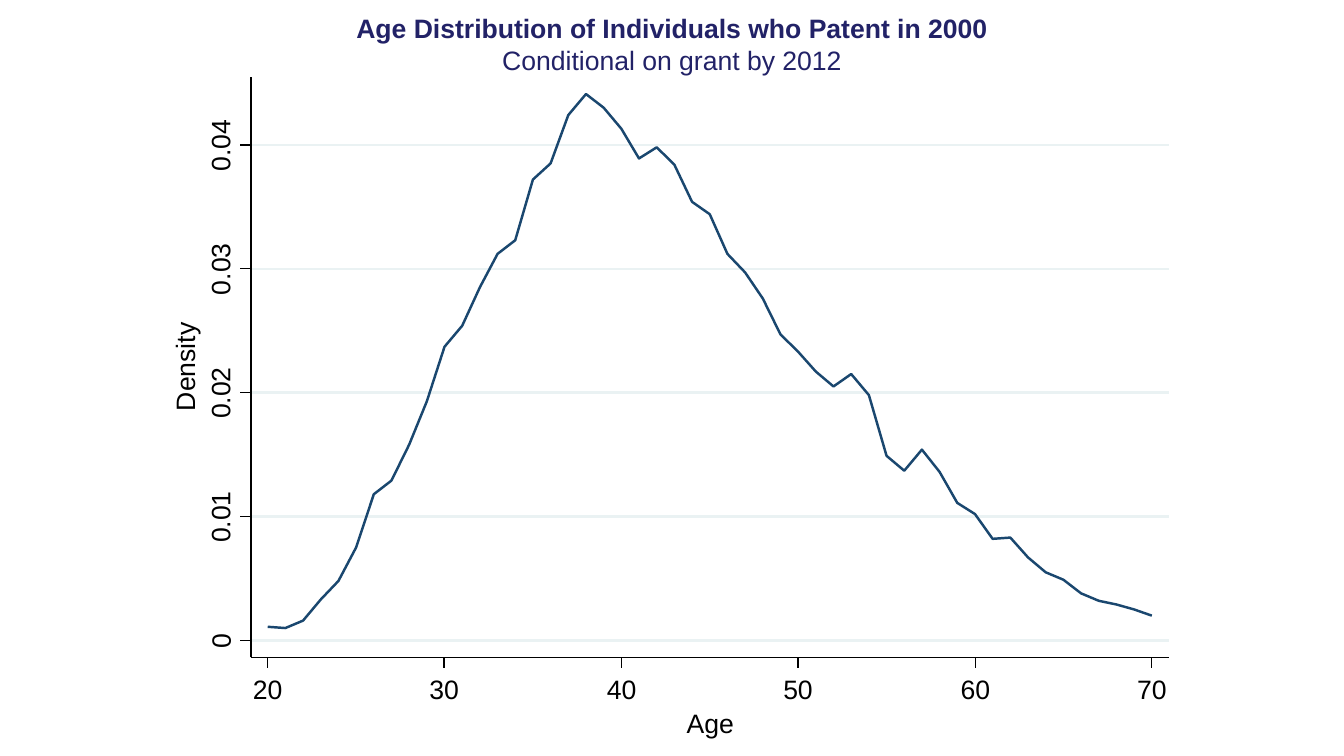
from lxml.etree import SubElement
from pptx import Presentation
from pptx.dml.color import RGBColor
from pptx.enum.shapes import MSO_CONNECTOR, MSO_SHAPE
from pptx.enum.text import MSO_AUTO_SIZE, PP_ALIGN
from pptx.oxml.ns import qn
from pptx.util import Pt

PX = 9525  # EMU in one px, 96 px to the inch
COLORS = {"paper": "FFFFFF", "grid": "EAF2F3", "curve": "1A476F",
          "axis": "000000", "title": "222267"}
LEFT, TOP, RIGHT, BOTTOM = 239, 73, 1113, 626  # plot area
FIRST_X, AGE_SPAN = 255, 842  # age 20, and the width of 50 years
ZERO_Y, DENSITY_SPAN = 610, 472  # density 0, and the height of 0.04
TICK = 10

# Density in thousandths for each age from 20 to 70
DENSITIES = [
    1.1, 1.0, 1.6, 3.3, 4.8, 7.5, 11.8, 12.9, 15.8, 19.3,
    23.7, 25.4, 28.5, 31.2, 32.3, 37.2, 38.5, 42.4, 44.1, 43.0,
    41.3, 38.9, 39.8, 38.4, 35.4, 34.4, 31.2, 29.7, 27.6, 24.7,
    23.3, 21.7, 20.5, 21.5, 19.8, 14.9, 13.7, 15.4, 13.6, 11.1,
    10.2, 8.2, 8.3, 6.7, 5.5, 4.9, 3.8, 3.2, 2.9, 2.5, 2.0]

deck = Presentation()
deck.slide_width, deck.slide_height = 1280 * PX, 720 * PX
page = deck.slides.add_slide(deck.slide_layouts[6])
graph = page.shapes.add_group_shape()


def add_text(shapes, lines, left, top, width, height, color="axis",
             align=PP_ALIGN.LEFT, wrap=False, bold_first=False, rotation=0):
    box = shapes.add_textbox(left * PX, top * PX, width * PX, height * PX)
    box.rotation = rotation
    frame = box.text_frame
    frame.margin_left = frame.margin_right = 0
    frame.margin_top = frame.margin_bottom = 0
    frame.word_wrap = wrap
    frame.auto_size = MSO_AUTO_SIZE.SHAPE_TO_FIT_TEXT
    for index, line in enumerate(lines):
        para = frame.paragraphs[0] if index == 0 else frame.add_paragraph()
        para.alignment = align
        span = para.add_run()
        span.text = line
        span.font.name, span.font.size = "Arial", Pt(19)
        span.font.bold = bold_first and index == 0
        span.font.color.rgb = RGBColor.from_string(COLORS[color])


def add_line(x1, y1, x2, y2, color="axis", weight=0.88):
    line = graph.shapes.add_connector(
        MSO_CONNECTOR.STRAIGHT, x1 * PX, y1 * PX, x2 * PX, y2 * PX)
    line.line.color.rgb = RGBColor.from_string(COLORS[color])
    line.line.width = Pt(weight)
    SubElement(line._element.spPr, qn("a:effectLst"))


# Plot background
plot = graph.shapes.add_shape(MSO_SHAPE.RECTANGLE, LEFT * PX, TOP * PX,
                              (RIGHT - LEFT) * PX, (BOTTOM - TOP) * PX)
plot.shadow.inherit = False
plot.fill.solid()
plot.fill.fore_color.rgb = RGBColor.from_string(COLORS["paper"])
plot.line.color.rgb = RGBColor.from_string(COLORS["paper"])
plot.line.width = Pt(0.88)

# Grid lines
grid_rows = [ZERO_Y - step * DENSITY_SPAN // 4 for step in range(5)]
for y in grid_rows:
    add_line(LEFT, y, RIGHT, y, color="grid", weight=1.75)

# Density curve
points = [((FIRST_X + year * AGE_SPAN / 50) * PX,
           (ZERO_Y - density * DENSITY_SPAN / 40) * PX)
          for year, density in enumerate(DENSITIES)]
builder = graph.shapes.build_freeform(*points[0])
builder.add_line_segments(points[1:], close=False)
curve = builder.convert_to_shape()
curve.shadow.inherit = False
curve.fill.background()
curve.line.color.rgb = RGBColor.from_string(COLORS["curve"])
curve.line.width = Pt(1.75)

# Density axis
add_line(LEFT, BOTTOM, LEFT, TOP)
for step, y in enumerate(grid_rows):
    add_line(LEFT, y, LEFT - TICK, y)
    label, width = (f"0.0{step}", 60) if step else ("0", 25)
    add_text(graph.shapes, [label], 211 - width // 2, y - 22, width, 34,
             rotation=270)
add_text(graph.shapes, ["Density"], 130, 327, 95, 34, rotation=270)

# Age axis
add_line(LEFT, BOTTOM, RIGHT, BOTTOM)
for age in range(20, 71, 10):
    x = FIRST_X + round((age - 20) * AGE_SPAN / 50)
    add_line(x, BOTTOM, x, BOTTOM + TICK)
    add_text(graph.shapes, [str(age)], x - 14, 641, 39, 34)
add_text(graph.shapes, ["Age"], 654, 673, 56, 34)

# Title
add_text(page.shapes,
         ["Age Distribution of Individuals who Patent in 2000",
          "Conditional on grant by 2012"],
         160, 11, 960, 61, color="title", align=PP_ALIGN.CENTER,
         wrap=True, bold_first=True)

deck.save("out.pptx")
